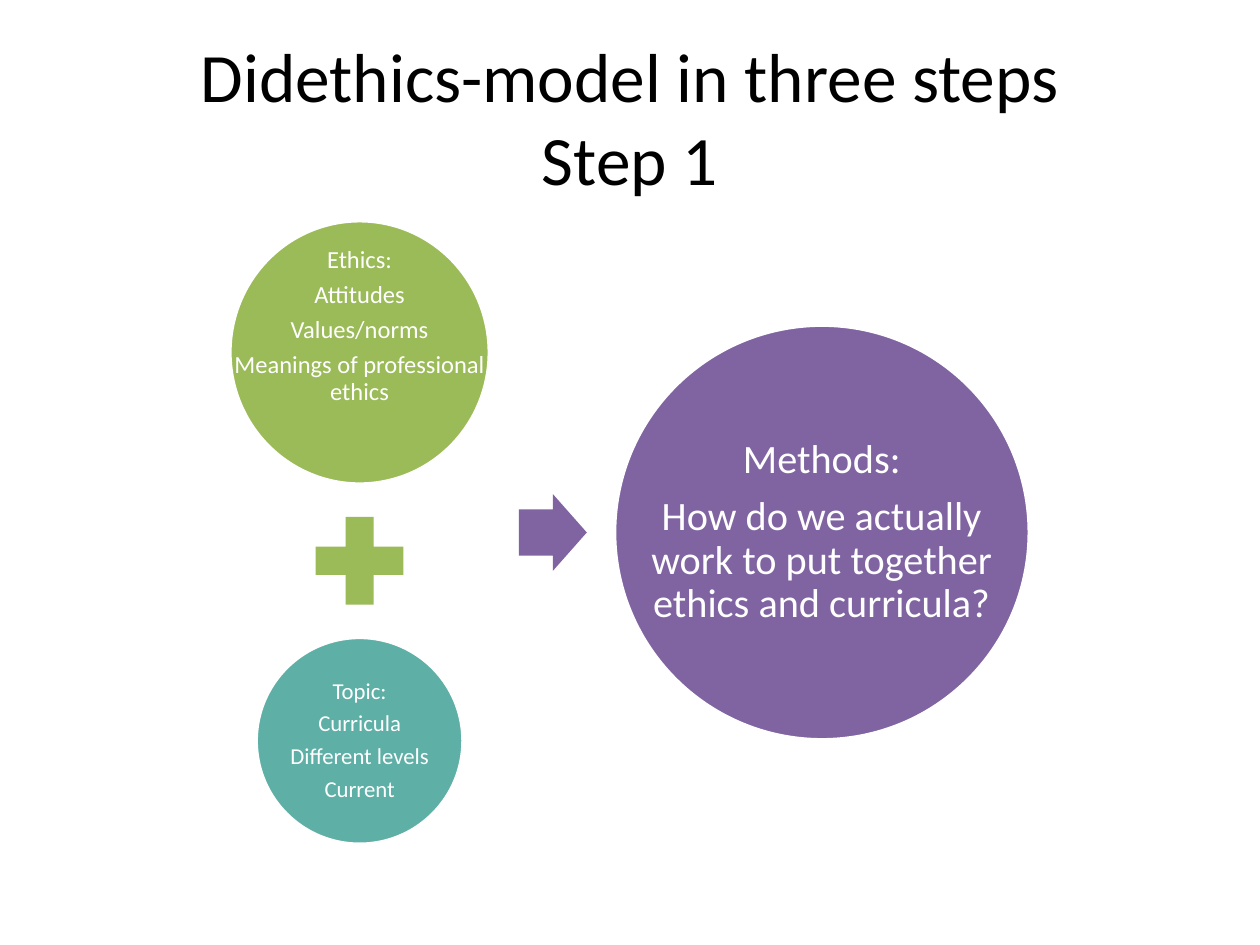
from pptx import Presentation
from pptx.dml.color import RGBColor
from pptx.enum.shapes import MSO_SHAPE
from pptx.enum.text import MSO_ANCHOR, MSO_AUTO_SIZE, PP_ALIGN
from pptx.util import Cm, Pt

# Content
TITLE_LINES = ["Didethics-model in three steps", "Step 1"]
GREEN, TEAL, PURPLE, WHITE, BLACK = "9BBB59", "5EAFA6", "8064A2", "FFFFFF", "000000"

ETHICS = dict(kind=MSO_SHAPE.OVAL, width=5.23, height=5.31, color=GREEN, size=14,
              inset=0.05, lift=1.05,
              lines=["Ethics:", "Attitudes", "Values/norms",
                     "Meanings of professional ethics"])
PLUS = dict(kind=MSO_SHAPE.MATH_PLUS, width=2.41, height=2.41, color=GREEN)
TOPIC = dict(kind=MSO_SHAPE.OVAL, width=4.17, height=4.17, color=TEAL, size=13,
             inset=0.05,
             lines=["Topic:", "Curricula", "Different levels", "Current"])
ARROW = dict(kind=MSO_SHAPE.RIGHT_ARROW, width=1.37, height=1.55, color=PURPLE,
             adjustments=[0.6, 0.5])
METHODS = dict(kind=MSO_SHAPE.OVAL, width=8.36, height=8.36, color=PURPLE, size=23,
               inset=0.08,
               lines=["Methods:",
                      "How do we actually work to put together ethics and curricula?"])

# Layout in cm: a centred column on the left, a centred row to its right
COLUMN, COLUMN_X, COLUMN_TOP, COLUMN_GAP = [ETHICS, PLUS, TOPIC], 7.25, 4.45, 0.34
ROW, ROW_LEFT, ROW_GAP = [ARROW, METHODS], 10.46, 0.56


def rgb(code):
    return RGBColor.from_string(code)


def apply(target, formats):
    for name, value in formats.items():
        setattr(target, name, value)


def add_label(slide, part, box):
    frame = slide.shapes.add_textbox(*box).text_frame
    inset = Cm(part["inset"])
    apply(frame, dict(word_wrap=True, vertical_anchor=MSO_ANCHOR.MIDDLE,
                      margin_left=inset, margin_right=inset, margin_top=inset,
                      margin_bottom=inset + Cm(part.get("lift", 0))))
    for index, line in enumerate(part["lines"]):
        paragraph = frame.paragraphs[0] if index == 0 else frame.add_paragraph()
        paragraph.text = line
        apply(paragraph, dict(alignment=PP_ALIGN.CENTER, line_spacing=0.9,
                              space_after=Pt(part["size"] * 0.35)))
        apply(paragraph.font, dict(name="Calibri", size=Pt(part["size"])))
        paragraph.font.color.rgb = rgb(WHITE)


def add_part(slide, part, left, top):
    box = [Cm(v) for v in (left, top, part["width"], part["height"])]
    shape = slide.shapes.add_shape(part["kind"], *box)
    shape.shadow.inherit = False
    shape.fill.solid()
    shape.fill.fore_color.rgb = rgb(part["color"])
    for index, value in enumerate(part.get("adjustments", [])):
        shape.adjustments[index] = value
    if "lines" in part:
        shape.line.color.rgb = rgb(WHITE)
        shape.line.width = Pt(2)
        add_label(slide, part, box)
    else:
        shape.line.fill.background()


def add_title(slide):
    title = slide.shapes.title
    apply(title, dict(left=Cm(1.27), top=Cm(0.76), width=Cm(22.86), height=Cm(3.18)))
    apply(title.text_frame, dict(word_wrap=True, auto_size=MSO_AUTO_SIZE.NONE,
                                 vertical_anchor=MSO_ANCHOR.MIDDLE))
    paragraph = title.text_frame.paragraphs[0]
    paragraph.alignment = PP_ALIGN.CENTER
    for index, line in enumerate(TITLE_LINES):
        if index:
            paragraph.add_line_break()
        run = paragraph.add_run()
        run.text = line
        apply(run.font, dict(name="Calibri", size=Pt(39.6)))
        run.font.color.rgb = rgb(BLACK)


def main():
    deck = Presentation()
    apply(deck, dict(slide_width=Cm(25.4), slide_height=Cm(19.05)))
    slide = deck.slides.add_slide(deck.slide_layouts[5])
    add_title(slide)

    # Ethics plus topic, stacked
    top = COLUMN_TOP
    for part in COLUMN:
        add_part(slide, part, COLUMN_X - part["width"] / 2, top)
        top += part["height"] + COLUMN_GAP

    # Arrow to methods, level with the middle of the column
    middle = (COLUMN_TOP + top - COLUMN_GAP) / 2
    left = ROW_LEFT
    for part in ROW:
        add_part(slide, part, left, middle - part["height"] / 2)
        left += part["width"] + ROW_GAP

    deck.save("out.pptx")


if __name__ == "__main__":
    main()
